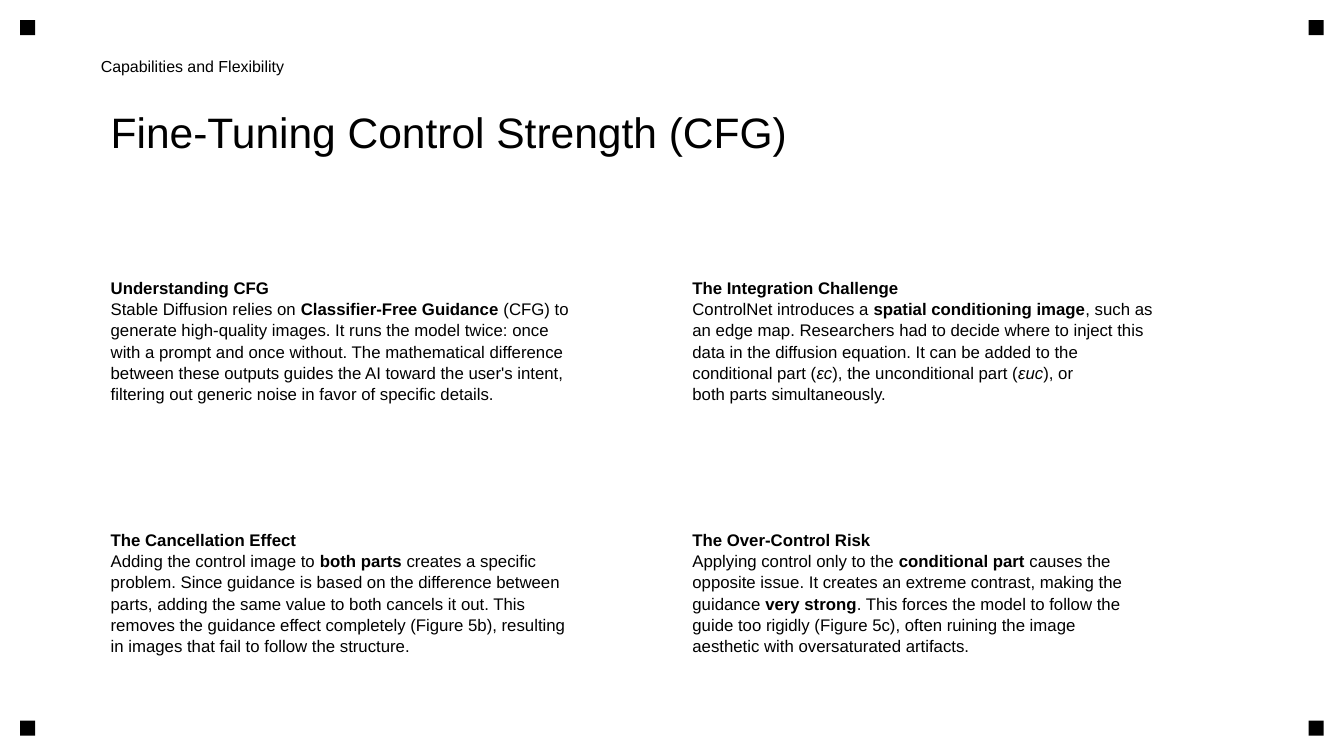
from dataclasses import dataclass
from itertools import product

from pptx import Presentation
from pptx import util as u
from pptx.dml.color import RGBColor
from pptx.enum import shapes, text


@dataclass(frozen=True)
class Theme:
    font: str = "Arial"
    ink: RGBColor = RGBColor(0, 0, 0)
    paper: RGBColor = RGBColor(255, 255, 255)
    title: float = 30.4
    section: float = 11.4
    body: float = 12
    body_spacing: float = 1.05


@dataclass(frozen=True)
class Box:
    left: float
    top: float
    width: float
    height: float

    def lengths(self):
        return [u.Cm(value) for value in (self.left, self.top, self.width, self.height)]


THEME = Theme()
PAGE = Box(0, 0, 33.87, 19.05)
SECTION = Box(2.54, 1.02, 15.24, 1.27)
TITLE = Box(2.54, 2.54, 28.78, 2.54)
CONTENT = Box(2.54, 5.84, 28.78, 11.94)
PADDING = (0.25, 0.13, 0.13, 0.25)

TOPICS = [
    ("Understanding CFG", [
        "Stable Diffusion relies on *Classifier-Free Guidance* (CFG) to",
        "generate high-quality images. It runs the model twice: once",
        "with a prompt and once without. The mathematical difference",
        "between these outputs guides the AI toward the user's intent,",
        "filtering out generic noise in favor of specific details.",
    ]),
    ("The Integration Challenge", [
        "ControlNet introduces a *spatial conditioning image*, such as",
        "an edge map. Researchers had to decide where to inject this",
        "data in the diffusion equation. It can be added to the",
        "conditional part (_εc_), the unconditional part (_εuc_), or",
        "both parts simultaneously.",
    ]),
    ("The Cancellation Effect", [
        "Adding the control image to *both parts* creates a specific",
        "problem. Since guidance is based on the difference between",
        "parts, adding the same value to both cancels it out. This",
        "removes the guidance effect completely (Figure 5b), resulting",
        "in images that fail to follow the structure.",
    ]),
    ("The Over-Control Risk", [
        "Applying control only to the *conditional part* causes the",
        "opposite issue. It creates an extreme contrast, making the",
        "guidance *very strong*. This forces the model to follow the",
        "guide too rigidly (Figure 5c), often ruining the image",
        "aesthetic with oversaturated artifacts.",
    ]),
]


def add_corner_marks(slide, box, margin=0.51, size=0.38):
    lefts = (box.left + margin, box.left + box.width - margin - size)
    tops = (box.top + margin, box.top + box.height - margin - size)
    for top, left in product(tops, lefts):
        mark = slide.shapes.add_shape(
            shapes.MSO_SHAPE.RECTANGLE, *Box(left, top, size, size).lengths())
        mark.shadow.inherit = False
        mark.fill.solid()
        mark.fill.fore_color.rgb = THEME.ink
        mark.line.fill.background()


def add_runs(paragraph, line, size):
    for i, strong_part in enumerate(line.split("*")):
        for j, part in enumerate(strong_part.split("_")):
            if part:
                run = paragraph.add_run()
                run.text = part
                run.font.name = THEME.font
                run.font.size = u.Pt(size)
                run.font.color.rgb = THEME.ink
                run.font.bold = i % 2 == 1
                run.font.italic = j % 2 == 1


def add_text(slide, box, lines, size, padding, anchor, spacing=None):
    frame = slide.shapes.add_textbox(*box.lengths()).text_frame
    frame.word_wrap = True
    frame.vertical_anchor = anchor
    (frame.margin_left, frame.margin_top,
     frame.margin_right, frame.margin_bottom) = [u.Cm(value) for value in padding]
    for index, line in enumerate(lines):
        paragraph = frame.add_paragraph() if index else frame.paragraphs[0]
        paragraph.line_spacing = spacing
        add_runs(paragraph, line, size)


def add_topic_grid(slide, box, columns=2, column_gap=0.54, row_gap=0.76):
    rows = len(TOPICS) // columns
    width = (box.width - column_gap * (columns - 1)) / columns
    height = (box.height - row_gap * (rows - 1)) / rows
    for index, (heading, lines) in enumerate(TOPICS):
        row, column = divmod(index, columns)
        cell = Box(box.left + column * (width + column_gap),
                   box.top + row * (height + row_gap), width, height)
        add_text(slide, cell, [f"*{heading}*", *lines], THEME.body, PADDING,
                 text.MSO_ANCHOR.MIDDLE, THEME.body_spacing)


def main():
    presentation = Presentation()
    presentation.slide_width = u.Cm(PAGE.width)
    presentation.slide_height = u.Cm(PAGE.height)
    slide = presentation.slides.add_slide(presentation.slide_layouts[6])
    slide.background.fill.solid()
    slide.background.fill.fore_color.rgb = THEME.paper
    add_corner_marks(slide, PAGE)
    add_text(slide, TITLE, ["Fine-Tuning Control Strength (CFG)"], THEME.title,
             PADDING, text.MSO_ANCHOR.TOP)
    add_topic_grid(slide, CONTENT)
    add_text(slide, SECTION, ["Capabilities and Flexibility"], THEME.section,
             (0, 0, 0, 0), text.MSO_ANCHOR.MIDDLE)
    presentation.save("out.pptx")


if __name__ == "__main__":
    main()
